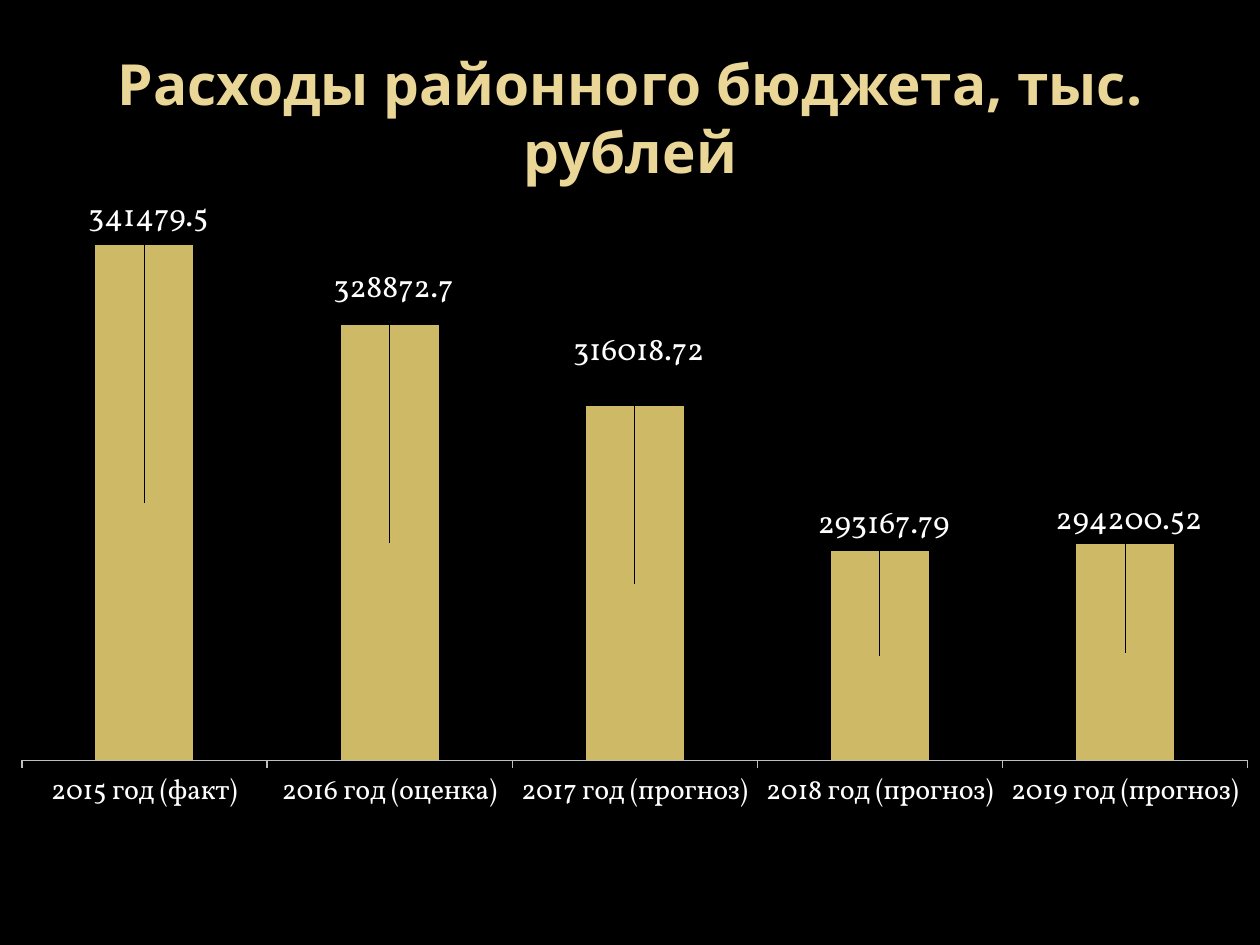
from dataclasses import dataclass

from lxml.etree import SubElement
from pptx import Presentation
from pptx.chart.data import CategoryChartData
from pptx.dml.color import RGBColor
from pptx.enum.chart import XL_CHART_TYPE, XL_LABEL_POSITION, XL_TICK_MARK
from pptx.enum.text import MSO_ANCHOR, PP_ALIGN
from pptx.oxml.ns import qn
from pptx.util import Pt


@dataclass(frozen=True)
class Theme:
    background: RGBColor = RGBColor(0x00, 0x00, 0x00)
    title: RGBColor = RGBColor(0xEA, 0xD6, 0x96)
    text: RGBColor = RGBColor(0xFF, 0xFF, 0xFF)
    bar: RGBColor = RGBColor(0xCE, 0xB9, 0x66)
    axis: RGBColor = RGBColor(0xBF, 0xBF, 0xBF)
    title_font: str = "Noto Sans"
    chart_font: str = "Vollkorn"
    title_size: float = 32.4
    label_size: float = 18
    category_size: float = 16


THEME = Theme()
EXPENSES = {
    "2015 год (факт)": 341479.5,
    "2016 год (оценка)": 328872.7,
    "2017 год (прогноз)": 316018.72,
    "2018 год (прогноз)": 293167.79,
    "2019 год (прогноз)": 294200.52,
}
LABEL_RISES = (0.37, 0.33, 0.3, 0.17, 0.17)


def style_font(font, name, size, color, bold=False):
    font.name = name
    font.size = Pt(size)
    font.bold = bold
    font.color.rgb = color


def add_text(page, text, *, left, top, width, height, font, size, color, bold):
    box = page.shapes.add_textbox(Pt(left), Pt(top), Pt(width), Pt(height))
    frame = box.text_frame
    frame.word_wrap = True
    frame.vertical_anchor = MSO_ANCHOR.MIDDLE
    para = frame.paragraphs[0]
    para.alignment = PP_ALIGN.CENTER
    span = para.add_run()
    span.text = text
    style_font(span.font, font, size, color, bold)


def set_layout(layout, **settings):
    manual = SubElement(layout, qn("c:manualLayout"))
    for name, value in settings.items():
        SubElement(manual, qn(f"c:{name}")).set("val", str(value))


def raise_label(series, index, rise):
    series.points[index].data_label.position = XL_LABEL_POSITION.CENTER
    label = series.data_labels._element.findall(qn("c:dLbl"))[index]
    layout = label.makeelement(qn("c:layout"))
    label.insert(1, layout)
    set_layout(layout, x=0.003, y=-rise)


def style_axes(chart):
    values = chart.value_axis
    values.minimum_scale = 260000
    values.maximum_scale = 350000
    values.has_major_gridlines = False
    values.visible = False
    categories = chart.category_axis
    categories.major_tick_mark = XL_TICK_MARK.OUTSIDE
    categories.format.line.color.rgb = THEME.axis
    style_font(categories.tick_labels.font, THEME.chart_font,
               THEME.category_size, THEME.text)


def add_expense_chart(page, left, top, width, height):
    data = CategoryChartData()
    data.categories = list(EXPENSES)
    data.add_series("Series 1", list(EXPENSES.values()))
    chart = page.shapes.add_chart(
        XL_CHART_TYPE.COLUMN_STACKED,
        Pt(left), Pt(top), Pt(width), Pt(height), data).chart
    chart.has_title = False
    chart.has_legend = False
    style_font(chart.font, THEME.chart_font, THEME.label_size, THEME.text)
    style_axes(chart)

    plot = chart.plots[0]
    plot.gap_width = 150
    plot.overlap = 100
    plot.vary_by_categories = False
    series = plot.series[0]
    series.format.fill.solid()
    series.format.fill.fore_color.rgb = THEME.bar
    labels = series.data_labels
    labels.show_value = True
    style_font(labels.font, THEME.chart_font, THEME.label_size, THEME.text)
    for index, rise in enumerate(LABEL_RISES):
        raise_label(series, index, rise)

    area = chart._chartSpace.find(f".//{qn('c:plotArea')}")
    layout = area.find(qn("c:layout"))
    if layout is None:
        layout = area.makeelement(qn("c:layout"))
        area.insert(0, layout)
    set_layout(layout, layoutTarget="inner", xMode="edge", yMode="edge",
               x=0.017, y=0.057, w=0.951, h=0.742)


def main():
    deck = Presentation()
    deck.slide_width, deck.slide_height = Pt(720), Pt(540)
    page = deck.slides.add_slide(deck.slide_layouts[6])
    page.background.fill.solid()
    page.background.fill.fore_color.rgb = THEME.background
    add_text(page, "Расходы районного бюджета, тыс. рублей",
             left=36, top=21.6, width=648, height=90, font=THEME.title_font,
             size=THEME.title_size, color=THEME.title, bold=True)
    add_expense_chart(page, left=0, top=84.24, width=736.56, height=438.48)
    deck.save("out.pptx")


if __name__ == "__main__":
    main()
